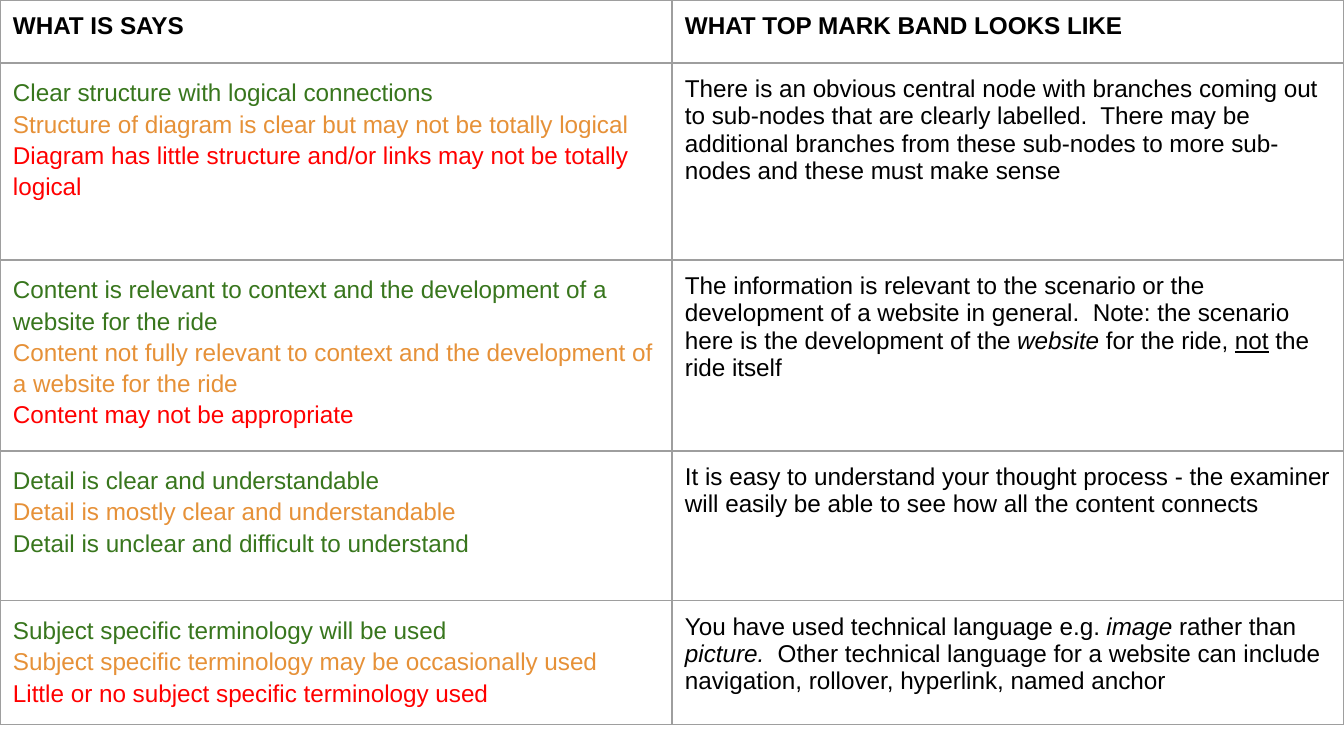
from lxml.etree import SubElement
from pptx import Presentation
from pptx.dml.color import RGBColor
from pptx.oxml.ns import qn
from pptx.util import Emu, Pt

SCALE = 914400 / 134.4  # EMU in one px
COLORS = {"ink": "000000", "good": "38761D", "fair": "E69138",
          "poor": "FF0000", "edge": "9E9E9E"}
WIDTH, HEIGHT, PAD = 1344, 756, 13
ROWS = [63, 197, 191, 150, 124]

HEADS = ["WHAT IS SAYS", "WHAT TOP MARK BAND LOOKS LIKE"]

# Each band: graded criteria, then the runs (text, style) of the explanation
BANDS = [
    ([("good", "Clear structure with logical connections"),
      ("fair", "Structure of diagram is clear but may not be totally logical"),
      ("poor", "Diagram has little structure and/or links may not be totally logical")],
     [("There is an obvious central node with branches coming out to sub-nodes "
       "that are clearly labelled.  There may be additional branches from these "
       "sub-nodes to more sub-nodes and these must make sense", "")]),
    ([("good", "Content is relevant to context and the development of a website for the ride"),
      ("fair", "Content not fully relevant to context and the development of a website for the ride"),
      ("poor", "Content may not be appropriate")],
     [("The information is relevant to the scenario or the development of a website "
       "in general.  Note: the scenario here is the development of the ", ""),
      ("website", "italic"), (" for the ride, ", ""),
      ("not", "underline"), (" the ride itself", "")]),
    ([("good", "Detail is clear and understandable"),
      ("fair", "Detail is mostly clear and understandable"),
      ("good", "Detail is unclear and difficult to understand")],
     [("It is easy to understand your thought process - the examiner will easily "
       "be able to see how all the content connects", "")]),
    ([("good", "Subject specific terminology will be used"),
      ("fair", "Subject specific terminology may be occasionally used"),
      ("poor", "Little or no subject specific terminology used")],
     [("You have used technical language e.g. ", ""), ("image ", "italic"),
      ("rather than ", ""), ("picture.  ", "italic"),
      ("Other technical language for a website can include navigation, rollover, "
       "hyperlink, named anchor", "")]),
]


def px(n):
    return Emu(round(n * SCALE))


def write(para, text, color="ink", size=13, bold=False, style="", space=None):
    """Add one run to a paragraph."""
    if space:
        para.line_spacing = space
    run = para.add_run()
    run.text = text
    font = run.font
    font.name, font.size, font.bold = "Arial", Pt(size), bold
    font.italic = style == "italic"
    font.underline = style == "underline"
    font.color.rgb = RGBColor.from_string(COLORS[color])


def frame(cell):
    """Give a cell its margins, thin edges and no fill."""
    cell.margin_left = cell.margin_right = px(PAD)
    cell.margin_top = cell.margin_bottom = px(PAD)
    props = cell._tc.get_or_add_tcPr()
    for side in ("a:lnL", "a:lnR", "a:lnT", "a:lnB"):
        line = SubElement(props, qn(side), w=str(Pt(0.75)))
        fill = SubElement(line, qn("a:solidFill"))
        SubElement(fill, qn("a:srgbClr"), val=COLORS["edge"])
    cell.fill.background()


def grade(cell, lines):
    """Write one coloured paragraph for each criterion."""
    body = cell.text_frame
    for i, (color, text) in enumerate(lines):
        para = body.add_paragraph() if i else body.paragraphs[0]
        write(para, text, color=color, space=1.15)


def build(slide, left, top, width, rows):
    """Place the mark band table in the given box."""
    table = slide.shapes.add_table(len(rows), 2, px(left), px(top),
                                   px(width), px(sum(rows))).table
    table.first_row = table.horz_banding = False
    for col in table.columns:
        col.width = px(width / 2)
    for row, high in zip(table.rows, rows):
        row.height = px(high)
    for cell in table.iter_cells():
        frame(cell)

    # Heading row
    for i, head in enumerate(HEADS):
        write(table.cell(0, i).text_frame.paragraphs[0], head, bold=True)

    # Mark bands
    for i, (lines, runs) in enumerate(BANDS, 1):
        grade(table.cell(i, 0), lines)
        para = table.cell(i, 1).text_frame.paragraphs[0]
        for text, style in runs:
            write(para, text, style=style)


def main():
    deck = Presentation()
    deck.slide_width, deck.slide_height = px(WIDTH), px(HEIGHT)
    slide = deck.slides.add_slide(deck.slide_layouts[6])
    build(slide, 0, 0, WIDTH, ROWS)
    deck.save("out.pptx")


if __name__ == "__main__":
    main()
